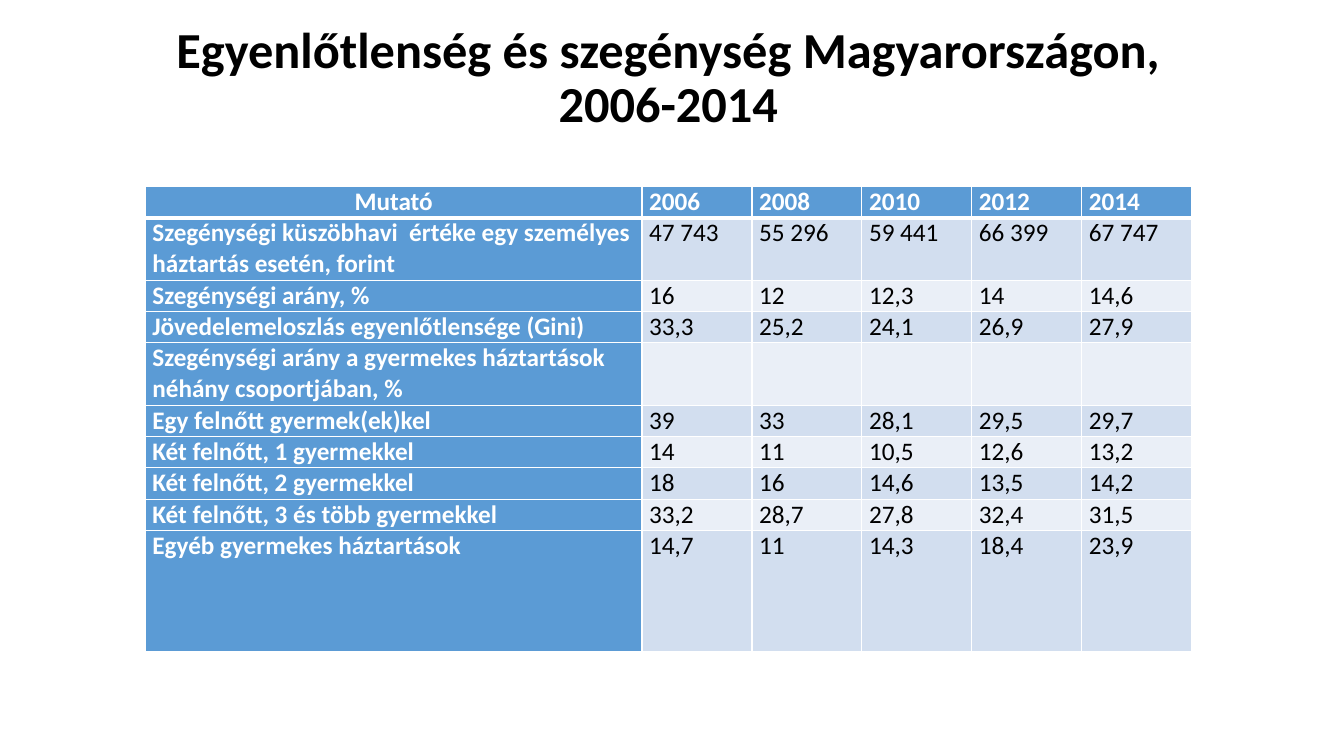
"""Build a slide with a table of inequality and poverty in Hungary."""
from lxml import etree
from pptx import Presentation
from pptx import util as u
from pptx.dml.color import RGBColor
from pptx.enum import text
from pptx.oxml import ns

BLACK = RGBColor(0x00, 0x00, 0x00)
WHITE = RGBColor(0xFF, 0xFF, 0xFF)
BLUE = RGBColor(0x5B, 0x9B, 0xD5)
BANDS = (RGBColor(0xEA, 0xEF, 0xF7), RGBColor(0xD2, 0xDE, 0xEF))

TITLE = "Egyenlőtlenség és szegénység Magyarországon,\v2006-2014"
INDICATORS = (
    ("Mutató", "2006", "2008", "2010", "2012", "2014"),
    ("Szegénységi küszöbhavi  értéke egy személyes háztartás esetén, forint",
     "47 743", "55 296", "59 441", "66 399", "67 747"),
    ("Szegénységi arány, %", "16", "12", "12,3", "14", "14,6"),
    ("Jövedelemeloszlás egyenlőtlensége (Gini)",
     "33,3", "25,2", "24,1", "26,9", "27,9"),
    ("Szegénységi arány a gyermekes háztartások néhány csoportjában, %",
     "", "", "", "", ""),
    ("Egy felnőtt gyermek(ek)kel", "39", "33", "28,1", "29,5", "29,7"),
    ("Két felnőtt, 1 gyermekkel", "14", "11", "10,5", "12,6", "13,2"),
    ("Két felnőtt, 2 gyermekkel", "18", "16", "14,6", "13,5", "14,2"),
    ("Két felnőtt, 3 és több gyermekkel",
     "33,2", "28,7", "27,8", "32,4", "31,5"),
    ("Egyéb gyermekes háztartások", "14,7", "11", "14,3", "18,4", "23,9"),
)
SINGLE, DOUBLE, LAST = 0.79, 1.57, 3.05
ROW_HEIGHTS = (SINGLE, DOUBLE, SINGLE, SINGLE, DOUBLE) + (SINGLE,) * 4 + (LAST,)
COLUMN_WIDTHS = (12.52,) + (2.77,) * 5


def apply(target, formats):
    """Set every attribute named in a dict of format values."""
    for name, value in formats.items():
        setattr(target, name, value)


def style_font(font, size, color, bold):
    """Give a font its face, size, weight and colour."""
    apply(font, {"name": "Calibri", "size": u.Pt(size), "bold": bold})
    font.color.rgb = color


def add_title(page):
    """Add the centred slide title."""
    box = page.shapes.add_textbox(u.Cm(2.24), u.Cm(0.86), u.Cm(29.21), u.Cm(3.68))
    apply(box.text_frame, {
        "word_wrap": True,
        "vertical_anchor": text.MSO_ANCHOR.MIDDLE,
        "margin_bottom": u.Cm(1.52),
    })
    para = box.text_frame.paragraphs[0]
    para.text = TITLE
    apply(para, {"alignment": text.PP_ALIGN.CENTER, "line_spacing": 0.9})
    for span in para.runs:
        style_font(span.font, 36, BLACK, True)


def add_borders(cell, widths):
    """Draw white cell borders from a dict of side letters and point widths."""
    properties = cell._tc.get_or_add_tcPr()
    for side, width in widths.items():
        line = etree.SubElement(properties, ns.qn(f"a:ln{side}"), w=str(u.Pt(width)))
        fill = etree.SubElement(line, ns.qn("a:solidFill"))
        etree.SubElement(fill, ns.qn("a:srgbClr"), val=str(WHITE))


def fill_cell(cell, words, row, column):
    """Write and format one table cell according to its row and column."""
    heading = row == 0 or column == 0
    apply(cell, {
        "margin_left": u.Cm(0.18), "margin_right": u.Cm(0.18),
        "margin_top": 0, "margin_bottom": 0,
    })
    add_borders(cell, {"L": 1, "R": 1, "T": 3 if row == 1 else 1,
                       "B": 3 if row == 0 else 1})
    cell.fill.solid()
    cell.fill.fore_color.rgb = BLUE if heading else BANDS[row % 2]
    para = cell.text_frame.paragraphs[0]
    centred = row == column == 0
    para.alignment = text.PP_ALIGN.CENTER if centred else text.PP_ALIGN.LEFT
    if words:
        span = para.add_run()
        span.text = words
        style_font(span.font, 18, WHITE if heading else BLACK, heading)


def add_indicator_table(page):
    """Add the table of indicators by year."""
    table = page.shapes.add_table(
        len(ROW_HEIGHTS), len(COLUMN_WIDTHS), u.Cm(3.66), u.Cm(4.7),
        u.Cm(sum(COLUMN_WIDTHS)), u.Cm(sum(ROW_HEIGHTS))).table
    for column, width in zip(table.columns, COLUMN_WIDTHS):
        column.width = u.Cm(width)
    for row, height in zip(table.rows, ROW_HEIGHTS):
        row.height = u.Cm(height)
    for row, indicator in enumerate(INDICATORS):
        for column, words in enumerate(indicator):
            fill_cell(table.cell(row, column), words, row, column)


def main():
    """Create the deck and save it."""
    deck = Presentation()
    apply(deck, {"slide_width": u.Cm(33.87), "slide_height": u.Cm(19.05)})
    page = deck.slides.add_slide(deck.slide_layouts[6])
    add_title(page)
    add_indicator_table(page)
    deck.save("out.pptx")


if __name__ == "__main__":
    main()
